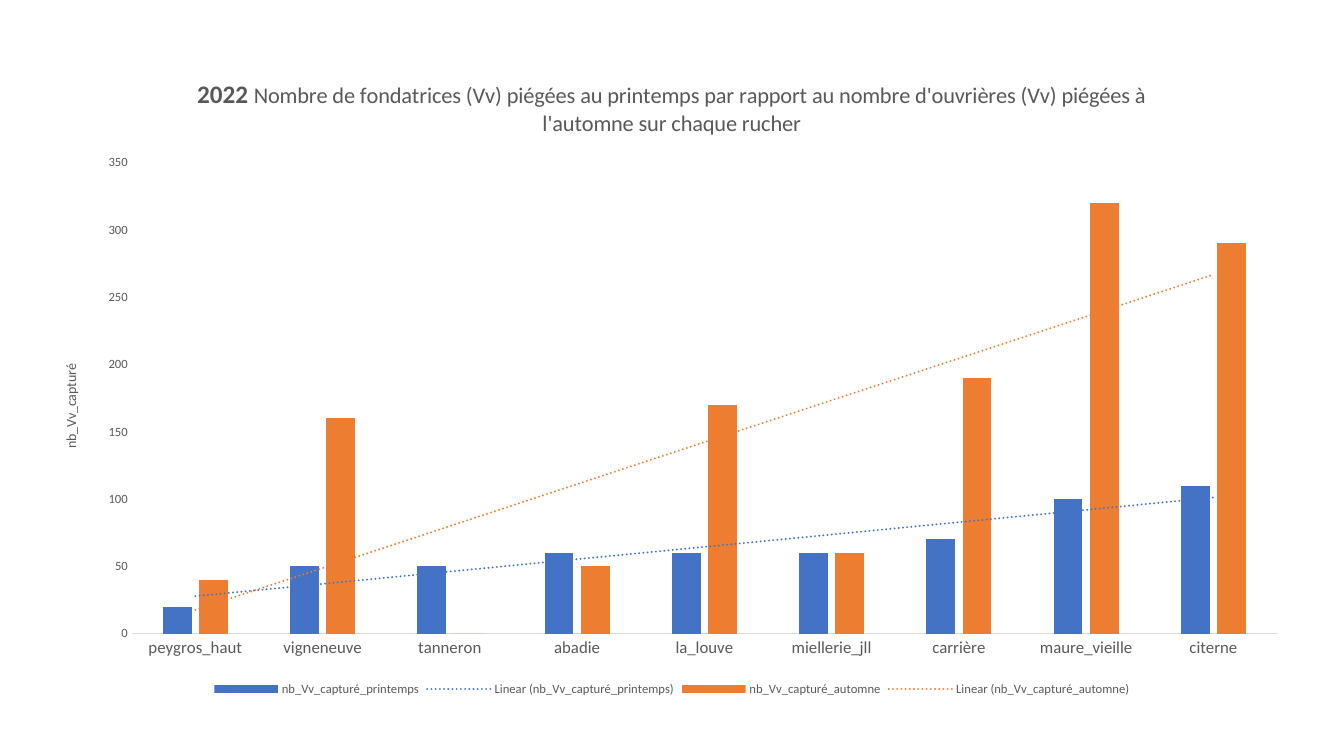
"""Build a slide charting spring and autumn captures per apiary, with linear trends."""
from dataclasses import dataclass

from lxml import etree
from pptx import Presentation
from pptx.chart import data
from pptx.chart.chart import Chart
from pptx.dml.color import RGBColor
from pptx.enum import chart as kinds
from pptx.oxml import parse_xml
from pptx.oxml.ns import nsdecls, qn
from pptx.text.text import Font, TextFrame
from pptx.util import Pt


@dataclass(frozen=True)
class Theme:
    face: str = "Calibri"
    ink: str = "595959"
    rule: str = "D9D9D9"
    blue: str = "4472C4"
    orange: str = "ED7D31"
    year: float = 18
    head: float = 16
    sites: float = 12
    label: float = 10
    small: float = 9


@dataclass(frozen=True)
class Season:
    name: str
    color: str
    counts: tuple[int, ...]


@dataclass(frozen=True)
class Run:
    words: str
    size: float
    bold: bool = False


THEME = Theme()
SITES = ("peygros_haut", "vigneneuve", "tanneron", "abadie", "la_louve",
         "miellerie_jll", "carrière", "maure_vieille", "citerne")
SEASONS = (
    Season("nb_Vv_capturé_printemps", THEME.blue, (20, 50, 50, 60, 60, 60, 70, 100, 110)),
    Season("nb_Vv_capturé_automne", THEME.orange, (40, 160, 0, 50, 170, 60, 190, 320, 290)),
)
TITLE = (
    Run("2022 ", THEME.year, True),
    Run("Nombre de fondatrices (Vv) piégées au printemps par rapport au nombre "
        "d'ouvrières (Vv) piégées à l'automne sur chaque rucher", THEME.head),
)


def style(font: Font, size: float, bold: bool = False) -> None:
    font.name = THEME.face
    font.size = Pt(size)
    font.bold = bold
    font.color.rgb = RGBColor.from_string(THEME.ink)


def write(frame: TextFrame, runs: tuple[Run, ...]) -> None:
    line = frame.paragraphs[0]
    for item in runs:
        run = line.add_run()
        run.text = item.words
        style(run.font, item.size, item.bold)


def trend(season: Season) -> etree._Element:
    return parse_xml(
        f'<c:trendline {nsdecls("c", "a")}><c:name>Linear ({season.name})</c:name>'
        f'<c:spPr><a:ln w="{Pt(1.5)}" cap="rnd"><a:solidFill>'
        f'<a:srgbClr val="{season.color}"/></a:solidFill><a:prstDash val="sysDot"/></a:ln></c:spPr>'
        '<c:trendlineType val="linear"/><c:dispRSqr val="0"/><c:dispEq val="0"/></c:trendline>')


def paint(chart: Chart) -> None:
    plot = chart.plots[0]
    plot.gap_width = 219
    plot.overlap = -27
    plot.vary_by_categories = False
    for season, bars in zip(SEASONS, plot.series):
        bars.format.fill.solid()
        bars.format.fill.fore_color.rgb = RGBColor.from_string(season.color)
        bars._element.find(qn("c:cat")).addprevious(trend(season))


def scale(chart: Chart) -> None:
    sites, count = chart.category_axis, chart.value_axis
    for axis, size in ((sites, THEME.sites), (count, THEME.small)):
        axis.major_tick_mark = axis.minor_tick_mark = kinds.XL_TICK_MARK.NONE
        axis.has_major_gridlines = False
        style(axis.tick_labels.font, size)
    sites.format.line.color.rgb = RGBColor.from_string(THEME.rule)
    sites.format.line.width = Pt(0.75)
    count.format.line.fill.background()
    count.minimum_scale, count.maximum_scale, count.major_unit = 0, 350, 50
    frame = count.axis_title.text_frame
    write(frame, (Run("nb_Vv_capturé", THEME.label),))
    turn = frame._txBody.find(qn("a:bodyPr"))
    turn.set("rot", "-5400000")
    turn.set("vert", "horz")


def main() -> None:
    deck = Presentation()
    deck.slide_width, deck.slide_height = Pt(960), Pt(540)
    slide = deck.slides.add_slide(deck.slide_layouts[6])
    table = data.CategoryChartData()
    table.categories = SITES
    for season in SEASONS:
        table.add_series(season.name, season.counts)
    chart = slide.shapes.add_chart(
        kinds.XL_CHART_TYPE.COLUMN_CLUSTERED,
        Pt(29.5), Pt(40.3), Pt(900.7), Pt(460), table).chart
    style(chart.font, THEME.label)
    write(chart.chart_title.text_frame, TITLE)
    chart.has_legend = True
    chart.legend.position = kinds.XL_LEGEND_POSITION.BOTTOM
    chart.legend.include_in_layout = False
    style(chart.legend.font, THEME.small)
    paint(chart)
    scale(chart)
    deck.save("out.pptx")


if __name__ == "__main__":
    main()
